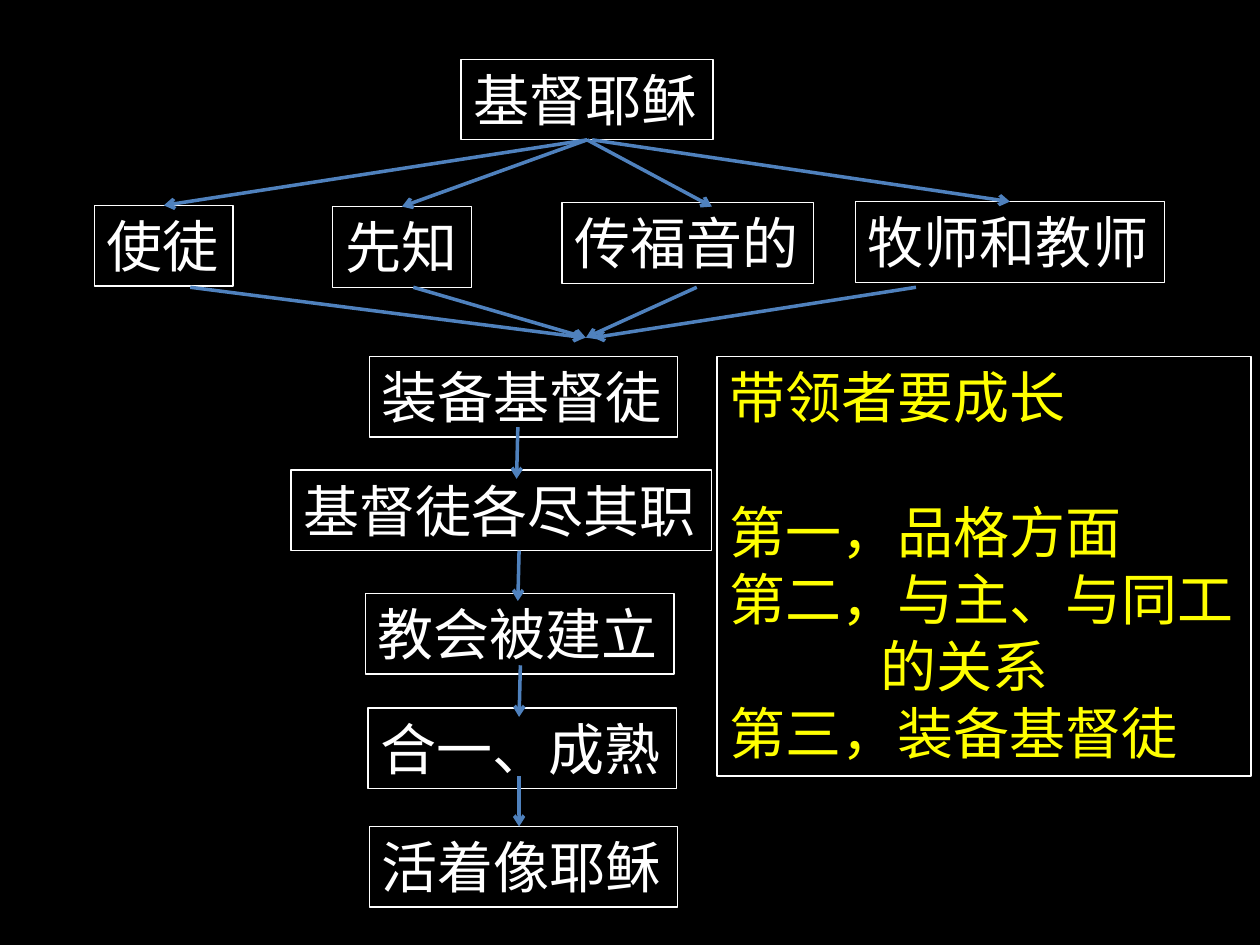
from lxml import etree
from pptx import Presentation
from pptx.dml.color import RGBColor
from pptx.enum.shapes import MSO_CONNECTOR, MSO_SHAPE
from pptx.enum.text import MSO_ANCHOR, MSO_AUTO_SIZE, PP_ALIGN
from pptx.oxml.ns import qn
from pptx.util import Inches, Pt

RECTANGLE = MSO_SHAPE.RECTANGLE
STRAIGHT = MSO_CONNECTOR.STRAIGHT
TOP_ANCHOR = MSO_ANCHOR.TOP
LEFT_ALIGN = PP_ALIGN.LEFT
FIT_SHAPE = MSO_AUTO_SIZE.SHAPE_TO_FIT_TEXT
TOP, BOTTOM = 0, 2

FONT = "Noto Sans CJK SC"
BLACK, WHITE, YELLOW, BLUE = "000000", "FFFFFF", "FFFF00", "4F81BD"
BOX_HEIGHT = 0.64

ROLES = [
    ("使徒", 0.75, 1.63, 1.1),
    ("先知", 2.64, 1.64, 1.1),
    ("传福音的", 4.46, 1.61, 2),
    ("牧师和教师", 6.79, 1.6, 2.45),
]
STEPS = [
    ("装备基督徒", 2.93, 2.83, 2.45),
    ("基督徒各尽其职", 2.31, 3.73, 3.34),
    ("教会被建立", 2.9, 4.71, 2.45),
    ("合一、成熟", 2.92, 5.62, 2.45),
    ("活着像耶稣", 2.93, 6.56, 2.45),
]
GIVING_ARROWS = [
    ((4.67, 1.11), (1.3, 1.63)),
    ((4.65, 1.11), (3.19, 1.64)),
    ((4.64, 1.11), (5.65, 1.64)),
    ((4.7, 1.11), (8.02, 1.6)),
]
EQUIPPING_ARROWS = [
    ((1.51, 2.28), (4.64, 2.68)),
    ((3.28, 2.28), (4.65, 2.68)),
    ((5.53, 2.28), (4.65, 2.68)),
    ((7.27, 2.28), (4.71, 2.68)),
]
STEP_ARROWS = [
    ((4.11, 3.39), (4.1, 3.8)),
    ((4.12, 4.37), (4.11, 4.77)),
    ((4.13, 5.28), (4.12, 5.69)),
    ((4.12, 6.16), (4.12, 6.56)),
]
GROWTH_LINES = [
    "带领者要成长",
    "第一，品格方面",
    "第二，与主、与同工",
    "的关系",
    "第三，装备基督徒",
]


def color(hex_string):
    return RGBColor.from_string(hex_string)


def add_box(page, text, left, top, width, height=BOX_HEIGHT, text_color=WHITE):
    box = page.shapes.add_shape(
        RECTANGLE, Inches(left), Inches(top), Inches(width), Inches(height))
    box.shadow.inherit = False
    box.fill.background()
    box.line.color.rgb = color(WHITE)
    box.line.width = Pt(0.75)
    frame = box.text_frame
    frame.text = text
    frame.word_wrap = False
    frame.auto_size = FIT_SHAPE
    frame.vertical_anchor = TOP_ANCHOR
    for para in frame.paragraphs:
        para.alignment = LEFT_ALIGN
        for span in para.runs:
            span.font.size = Pt(32)
            span.font.name = FONT
            span.font.color.rgb = color(text_color)
            east_asian = etree.SubElement(span.font._element, qn("a:ea"))
            east_asian.set("typeface", FONT)
    return box


def add_growth_panel(page):
    panel = add_box(page, "\n".join(GROWTH_LINES), 5.69, 2.83, 4.24, 3.33, YELLOW)
    paragraphs = panel.text_frame.paragraphs
    paragraphs[1].space_before = Pt(38.4)
    continuation = paragraphs[3]._p.get_or_add_pPr()
    continuation.set("marL", str(Inches(1.2)))
    continuation.set("indent", "0")


def add_arrow(page, start, end):
    arrow = page.shapes.add_connector(
        STRAIGHT, *(Inches(value) for value in start + end))
    arrow.line.color.rgb = color(BLUE)
    arrow.line.width = Pt(2)
    tail = etree.SubElement(arrow.line._get_or_add_ln(), qn("a:tailEnd"))
    tail.set("type", "arrow")
    etree.SubElement(arrow._element.spPr, qn("a:effectLst"))
    return arrow


def join_at_middle(arrow, source, target):
    tolerance = Inches(0.03)
    if abs(arrow.begin_x - source.left - source.width // 2) < tolerance:
        arrow.begin_connect(source, BOTTOM)
    if abs(arrow.end_x - target.left - target.width // 2) < tolerance:
        arrow.end_connect(target, TOP)


def main():
    deck = Presentation()
    deck.slide_width, deck.slide_height = Inches(10), Inches(7.5)
    page = deck.slides.add_slide(deck.slide_layouts[6])
    page.background.fill.solid()
    page.background.fill.fore_color.rgb = color(BLACK)

    christ = add_box(page, "基督耶稣", 3.66, 0.47, 2)
    roles = [add_box(page, *role) for role in ROLES]
    for role, (start, end) in zip(roles, GIVING_ARROWS):
        join_at_middle(add_arrow(page, start, end), christ, role)
    for step in STEPS:
        add_box(page, *step)
    for start, end in EQUIPPING_ARROWS + STEP_ARROWS:
        add_arrow(page, start, end)
    add_growth_panel(page)

    deck.save("out.pptx")


if __name__ == "__main__":
    main()
